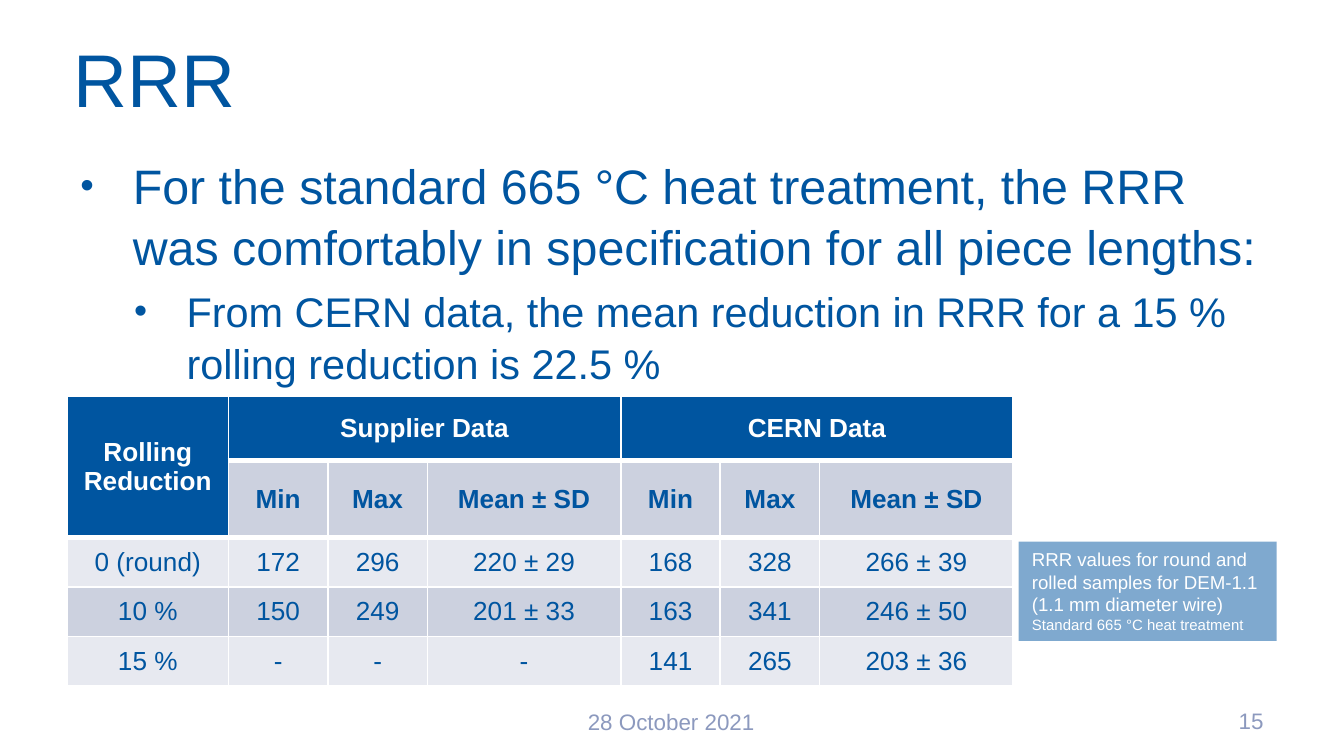
"""Build the RRR slide with its rolling reduction table."""
import pptx
import pptx.dml.color
import pptx.enum.shapes
import pptx.enum.text
import pptx.oxml
import pptx.oxml.ns
import pptx.util
from lxml import etree

Inches = pptx.util.Inches
Pt = pptx.util.Pt
RGBColor = pptx.dml.color.RGBColor
ALIGN = pptx.enum.text.PP_ALIGN
ANCHOR = pptx.enum.text.MSO_ANCHOR
qn = pptx.oxml.ns.qn

BLUE = RGBColor(0x00, 0x55, 0xA0)
WHITE = RGBColor(0xFF, 0xFF, 0xFF)
FOOTER = RGBColor(0x8C, 0x99, 0xBE)
BAND_DARK = RGBColor(0xCC, 0xD1, 0xDF)
BAND_LIGHT = RGBColor(0xE7, 0xE9, 0xF0)


def style(para, size, color, align=ALIGN.LEFT, bold=False):
    para.alignment = align
    para.font.name = "Arial"
    para.font.size = Pt(size)
    para.font.bold = bold
    para.font.color.rgb = color


def add_box(left, top, width, height, anchor):
    frame = page.shapes.add_textbox(
        Inches(left), Inches(top), Inches(width), Inches(height)).text_frame
    frame.word_wrap = True
    frame.vertical_anchor = anchor
    return frame


deck = pptx.Presentation()
deck.slide_width = Inches(10)
deck.slide_height = deck.slide_width * 9 // 16
page = deck.slides.add_slide(deck.slide_layouts[6])

title = add_box(0.5, 0.19, 9, 0.77, ANCHOR.MIDDLE)
title.margin_left = title.margin_right = Inches(0.05)
title.paragraphs[0].text = "RRR"
style(title.paragraphs[0], 40, BLUE)

points = [
    ("For the standard 665 °C heat treatment, the RRR was comfortably in "
     "specification for all piece lengths:", 25.9, 80),
    ("From CERN data, the mean reduction in RRR for a 15 % rolling "
     "reduction is 22.5 %", 22.2, 90),
]
body = add_box(0.5, 1.09, 9, 1.87, ANCHOR.TOP)
for level, (text, size, bullet_size) in enumerate(points):
    para = body.add_paragraph() if level else body.paragraphs[0]
    para.text = text
    para.level = level
    para.line_spacing = 1.05
    if level:
        para.space_before = Pt(4.5)
    props = para._p.get_or_add_pPr()
    props.set("marL", str(Inches(0.39 + 0.4 * level)))
    props.set("indent", str(Inches(-0.39)))
    color = etree.SubElement(props, qn("a:buClr"))
    etree.SubElement(color, qn("a:srgbClr"), val=str(BLUE))
    etree.SubElement(props, qn("a:buSzPct"), val=str(bullet_size * 1000))
    etree.SubElement(props, qn("a:buFont"), typeface="Arial")
    etree.SubElement(props, qn("a:buChar"), char="•")
    style(para, size, BLUE)

footers = [
    ("28 October 2021", 3.83, 5.22, 2.33, ALIGN.CENTER),
    ("15", 8.95, 5.21, 0.55, ALIGN.RIGHT),
]
for text, left, top, width, align in footers:
    para = add_box(left, top, width, 0.3, ANCHOR.MIDDLE).paragraphs[0]
    para.text = text
    style(para, 12, FOOTER, align)

rows = [
    ["Rolling\vReduction", "Supplier Data", "", "", "CERN Data", "", ""],
    [""] + ["Min", "Max", "Mean ± SD"] * 2,
    ["0 (round)", "172", "296", "220 ± 29", "168", "328", "266 ± 39"],
    ["10 %", "150", "249", "201 ± 33", "163", "341", "246 ± 50"],
    ["15 %", "-", "-", "-", "141", "265", "203 ± 36"],
]
widths = [1.2] + [0.74, 0.74, 1.44] * 2
heights = [0.48, 0.53, 0.37, 0.37, 0.37]
bands = [BLUE, BAND_DARK, BAND_LIGHT, BAND_DARK, BAND_LIGHT]
table = page.shapes.add_table(
    len(rows), len(widths), Inches(0.5), Inches(2.95),
    Inches(sum(widths)), Inches(sum(heights))).table
for column, width in zip(table.columns, widths):
    column.width = Inches(width)
for row, height in zip(table.rows, heights):
    row.height = Inches(height)

for r, values in enumerate(rows):
    for c, text in enumerate(values):
        cell = table.cell(r, c)
        header = r == 0 or (r == 1 and c == 0)
        cell.vertical_anchor = ANCHOR.MIDDLE
        para = cell.text_frame.paragraphs[0]
        para.text = text
        style(para, 14, WHITE if header else BLUE, ALIGN.CENTER, r < 2)
        props = cell._tc.get_or_add_tcPr()
        thick = {"lnT": r in (1, 2), "lnB": r < 2}
        for side in ("lnL", "lnR", "lnT", "lnB"):
            weight = Pt(3 if thick.get(side) else 1)
            line = etree.SubElement(props, qn("a:" + side), w=str(weight))
            fill = etree.SubElement(line, qn("a:solidFill"))
            etree.SubElement(fill, qn("a:srgbClr"), val=str(WHITE))
        cell.fill.solid()
        cell.fill.fore_color.rgb = BLUE if header else bands[r]
table.cell(0, 0).merge(table.cell(1, 0))
for first in (1, 4):
    table.cell(0, first).merge(table.cell(0, first + 2))

note = page.shapes.add_shape(
    pptx.enum.shapes.MSO_SHAPE.RECTANGLE,
    Inches(7.58), Inches(4.03), Inches(1.92), Inches(0.74))
note.shadow.inherit = False
note.line.fill.background()
note.fill.solid()
note.fill.fore_color.rgb = BLUE
tint = note._element.spPr.find(qn("a:solidFill"))[0]
etree.SubElement(tint, qn("a:alpha"), val="50000")
note.text_frame.word_wrap = True
note.text_frame.vertical_anchor = ANCHOR.TOP
para = note.text_frame.paragraphs[0]
style(para, 10, WHITE)
span = para.add_run()
span.text = ("RRR values for round and rolled samples for DEM-1.1 "
             "(1.1 mm diameter wire)")
para.add_line_break()
span = para.add_run()
span.text = "Standard 665 °C heat treatment"
span.font.size = Pt(8)

deck.save("out.pptx")
